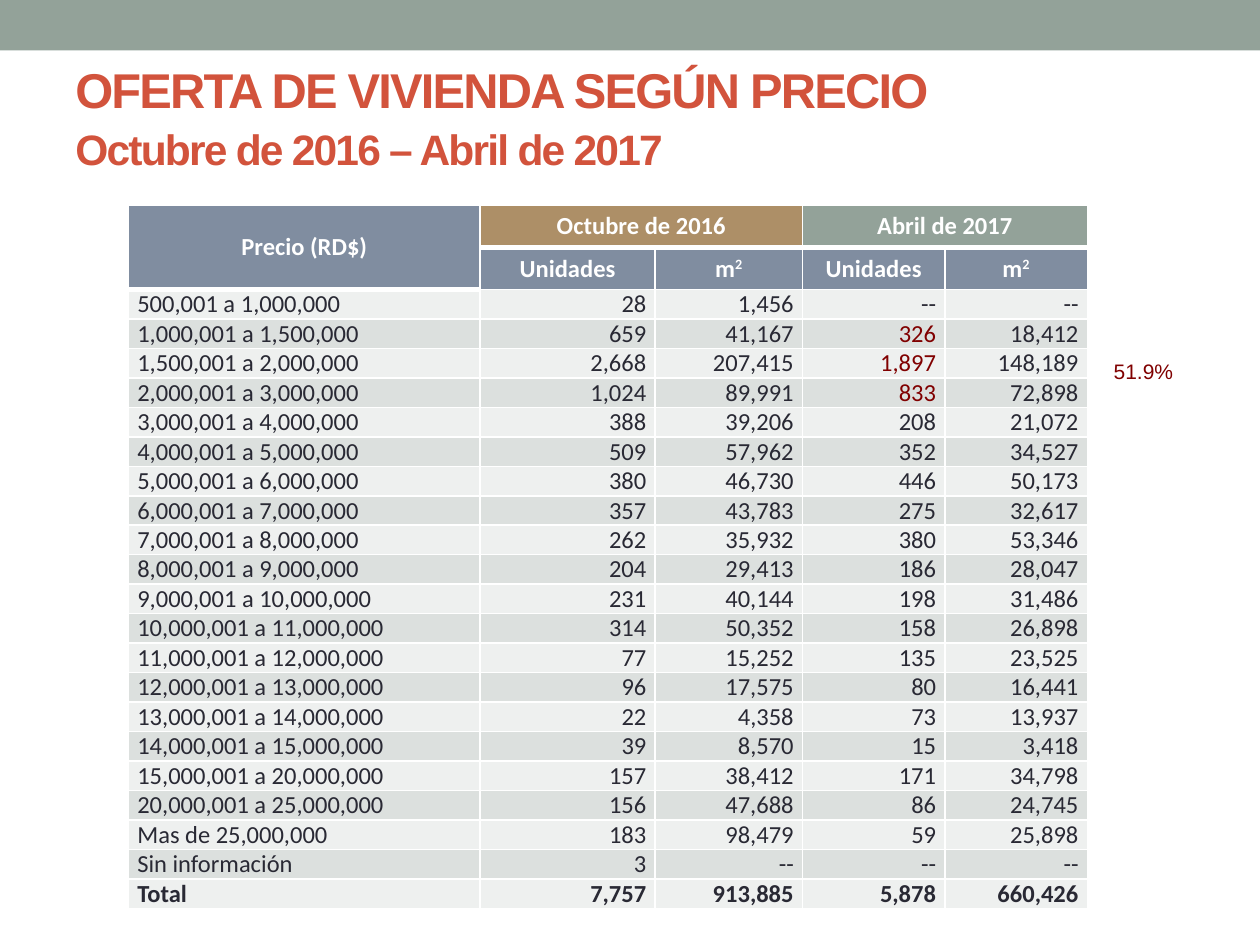
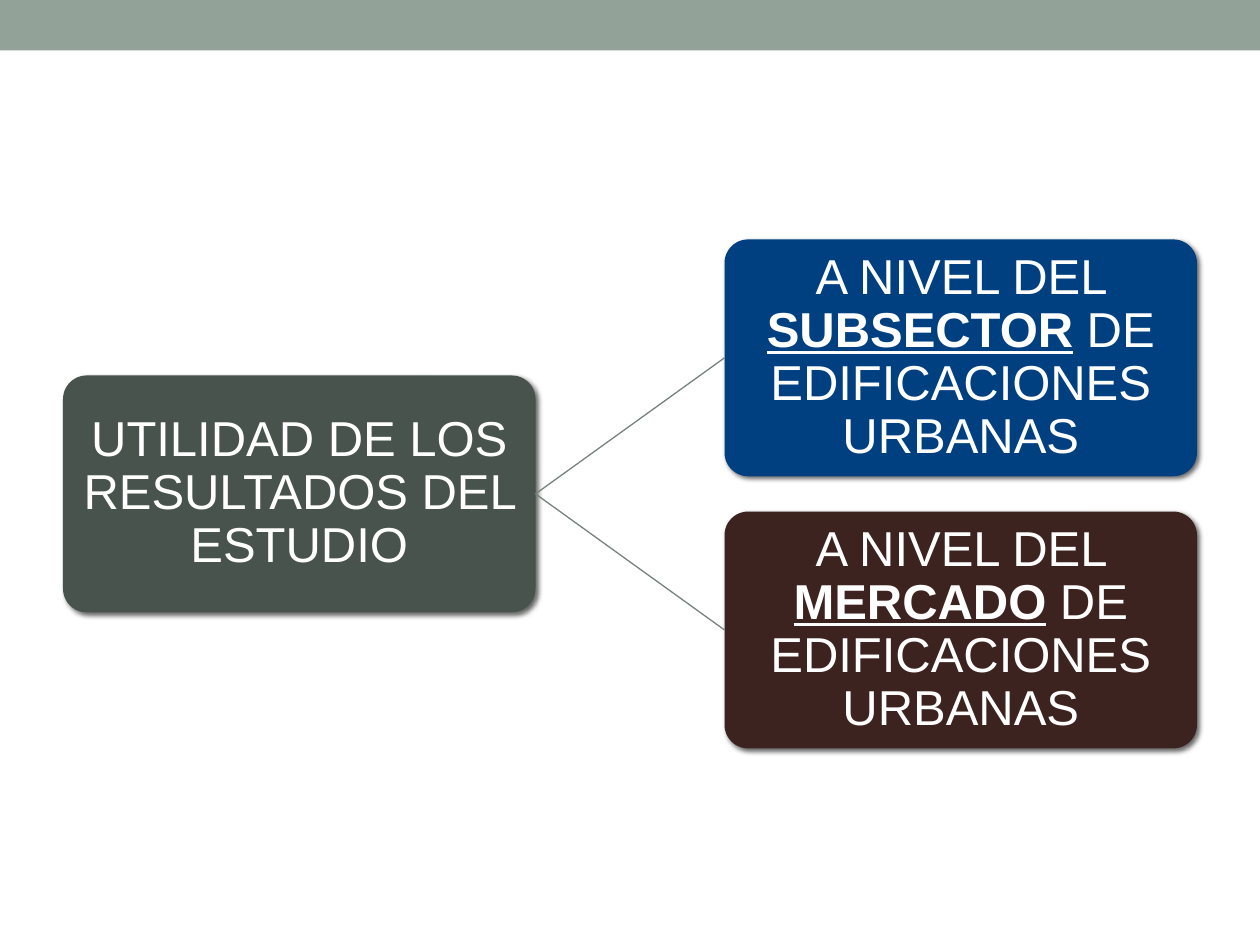
"""Build two slides on the housing supply by price and the uses of the study."""
from dataclasses import dataclass

from lxml.etree import SubElement
from pptx import Presentation
from pptx.dml.color import RGBColor
from pptx.enum.shapes import MSO_CONNECTOR, MSO_SHAPE
from pptx.enum.text import MSO_ANCHOR, PP_ALIGN
from pptx.oxml.ns import qn
from pptx.shapes.autoshape import Shape
from pptx.slide import Slide
from pptx.table import _Cell
from pptx.util import Inches, Pt

COLORS = {
    "band": "93A299", "title": "D2533C", "header": "808DA0", "october": "AD8F67",
    "light": "EEF0EF", "dark": "DCE0DE", "text": "292934", "accent": "800000",
    "white": "FFFFFF", "study": "47534C", "subsector": "004080",
    "market": "3C231F", "link": "76827B", "shadow": "000000",
}
RIGHT_SITE, LEFT_SITE = 3, 1
COL_WIDTHS = (2.79, 1.39, 1.17, 1.13, 1.13)
HEADER_HEIGHT, ROW_HEIGHT = 0.33, 0.23
UNITS_2017 = 3
ACCENT_ROWS = range(1, 4)
PRICE_ROWS = (
    ("500,001 a 1,000,000", "28", "1,456", "--", "--"),
    ("1,000,001 a 1,500,000", "659", "41,167", "326", "18,412"),
    ("1,500,001 a 2,000,000", "2,668", "207,415", "1,897", "148,189"),
    ("2,000,001 a 3,000,000", "1,024", "89,991", "833", "72,898"),
    ("3,000,001 a 4,000,000", "388", "39,206", "208", "21,072"),
    ("4,000,001 a 5,000,000", "509", "57,962", "352", "34,527"),
    ("5,000,001 a 6,000,000", "380", "46,730", "446", "50,173"),
    ("6,000,001 a 7,000,000", "357", "43,783", "275", "32,617"),
    ("7,000,001 a 8,000,000", "262", "35,932", "380", "53,346"),
    ("8,000,001 a 9,000,000", "204", "29,413", "186", "28,047"),
    ("9,000,001 a 10,000,000", "231", "40,144", "198", "31,486"),
    ("10,000,001 a 11,000,000", "314", "50,352", "158", "26,898"),
    ("11,000,001 a 12,000,000", "77", "15,252", "135", "23,525"),
    ("12,000,001 a 13,000,000", "96", "17,575", "80", "16,441"),
    ("13,000,001 a 14,000,000", "22", "4,358", "73", "13,937"),
    ("14,000,001 a 15,000,000", "39", "8,570", "15", "3,418"),
    ("15,000,001 a 20,000,000", "157", "38,412", "171", "34,798"),
    ("20,000,001 a 25,000,000", "156", "47,688", "86", "24,745"),
    ("Mas de 25,000,000", "183", "98,479", "59", "25,898"),
    ("Sin información", "3", "--", "--", "--"),
    ("Total", "7,757", "913,885", "5,878", "660,426"),
)


@dataclass(frozen=True)
class HeaderCell:
    """Heading of the price table and the cells it spans."""
    row: int
    col: int
    text: str
    fill: str = "header"
    rows: int = 1
    cols: int = 1
    sup: str = ""
    rule: float = 1


@dataclass(frozen=True)
class Node:
    """Rounded box whose key word is bold and underlined."""
    left: float
    top: float
    fill: str
    before: str
    key: str = ""
    after: str = ""


HEADERS = (
    HeaderCell(0, 0, "Precio (RD$)", rows=2, rule=3),
    HeaderCell(0, 1, "Octubre de 2016", "october", cols=2, rule=3),
    HeaderCell(0, 3, "Abril de 2017", "band", cols=2, rule=3),
    *(HeaderCell(1, col, "Unidades") for col in (1, 3)),
    *(HeaderCell(1, col, "m", sup="2") for col in (2, 4)),
)
STUDY = Node(0.5, 2.98, "study", "UTILIDAD DE LOS RESULTADOS DEL ESTUDIO")
LEVELS = (
    Node(5.75, 1.9, "subsector", "A NIVEL DEL ", "SUBSECTOR", " DE EDIFICACIONES URBANAS"),
    Node(5.75, 4.06, "market", "A NIVEL DEL ", "MERCADO", " DE EDIFICACIONES URBANAS"),
)


def rgb(name: str) -> RGBColor:
    """Return a named colour."""
    return RGBColor.from_string(COLORS[name])


def set_font(font, size: float, color: str, name: str = "Arial", bold: bool = False) -> None:
    """Set the typeface, size, weight and colour of a font."""
    font.name, font.size, font.bold = name, Pt(size), bold
    font.color.rgb = rgb(color)


def add_slide(prs) -> Slide:
    """Add a blank slide with the top band."""
    s = prs.slides.add_slide(prs.slide_layouts[6])
    sp = s.shapes.add_shape(MSO_SHAPE.RECTANGLE, 0, 0, prs.slide_width, Inches(0.4))
    sp.shadow.inherit = False
    sp.fill.solid()
    sp.fill.fore_color.rgb = rgb("band")
    sp.line.fill.background()
    return s


def add_title(s: Slide, title: str, subtitle: str) -> None:
    """Add a title with a smaller second line."""
    sp = s.shapes.add_textbox(Inches(0.5), Inches(0.45), Inches(9), Inches(0.92))
    tf = sp.text_frame
    tf.word_wrap = True
    tf.vertical_anchor = MSO_ANCHOR.MIDDLE
    p = tf.paragraphs[0]
    p.line_spacing = 1.08
    for i, (text, size) in enumerate(((title, 27.9), (subtitle, 24.3))):
        if i:
            p.add_line_break()
        r = p.add_run()
        r.text = text
        set_font(r.font, size, "title", bold=True)
        r._r.get_or_add_rPr().set("spc", "-100")


def style_cell(cell: _Cell, fill: str, bottom: float = 1) -> None:
    """Give a cell white rules and a plain fill."""
    tc_pr = cell._tc.get_or_add_tcPr()
    for side, width in (("L", 1), ("R", 1), ("T", 1), ("B", bottom)):
        ln = SubElement(tc_pr, qn(f"a:ln{side}"), w=str(Pt(width)))
        SubElement(SubElement(ln, qn("a:solidFill")), qn("a:srgbClr"), val=COLORS["white"])
    cell.fill.solid()
    cell.fill.fore_color.rgb = rgb(fill)


def add_header(table, header: HeaderCell) -> None:
    """Write one heading, merging the cells it spans."""
    last_row, last_col = header.row + header.rows, header.col + header.cols
    for row in range(header.row, last_row):
        for col in range(header.col, last_col):
            style_cell(table.cell(row, col), header.fill, header.rule)
    cell = table.cell(header.row, header.col)
    if header.rows * header.cols > 1:
        cell.merge(table.cell(last_row - 1, last_col - 1))
    cell.vertical_anchor = MSO_ANCHOR.MIDDLE
    p = cell.text_frame.paragraphs[0]
    p.alignment = PP_ALIGN.CENTER
    set_font(p.font, 14, "white", "Calibri", True)
    p.add_run().text = header.text
    if header.sup:
        r = p.add_run()
        r.text = header.sup
        r._r.get_or_add_rPr().set("baseline", "30000")


def add_price_table(s: Slide) -> None:
    """Add the table of supply by price range."""
    heights = [HEADER_HEIGHT] * 2 + [ROW_HEIGHT] * len(PRICE_ROWS)
    table = s.shapes.add_table(len(heights), len(COL_WIDTHS), Inches(1.02), Inches(1.63),
                               Inches(sum(COL_WIDTHS)), Inches(sum(heights))).table
    table.first_row = table.horz_banding = False
    for column, width in zip(table.columns, COL_WIDTHS):
        column.width = Inches(width)
    for row, height in zip(table.rows, heights):
        row.height = Inches(height)
    for header in HEADERS:
        add_header(table, header)
    for i, values in enumerate(PRICE_ROWS):
        for col, value in enumerate(values):
            cell = table.cell(i + 2, col)
            style_cell(cell, "dark" if i % 2 else "light")
            cell.vertical_anchor = MSO_ANCHOR.BOTTOM
            cell.margin_left = cell.margin_right = Inches(0.07)
            cell.margin_top = cell.margin_bottom = 0
            p = cell.text_frame.paragraphs[0]
            p.text = value
            p.alignment = PP_ALIGN.RIGHT if col else PP_ALIGN.JUSTIFY
            color = "accent" if col == UNITS_2017 and i in ACCENT_ROWS else "text"
            set_font(p.font, 14, color, "Calibri", values[0] == "Total")


def add_share(s: Slide, text: str) -> None:
    """Add the share of the highlighted units beside the table."""
    sp = s.shapes.add_textbox(Inches(8.74), Inches(2.8), Inches(0.68), Inches(0.3))
    p = sp.text_frame.paragraphs[0]
    p.text = text
    set_font(p.font, 12, "accent")


def add_shadow(sp: Shape) -> None:
    """Cast a soft shadow to the lower right."""
    sp.shadow.inherit = False
    effects = sp._element.spPr.find(qn("a:effectLst"))
    shadow = SubElement(effects, qn("a:outerShdw"), blurRad=str(Pt(3)), dist=str(Pt(2)),
                        dir="2700000", algn="br", rotWithShape="0")
    color = SubElement(shadow, qn("a:srgbClr"), val=COLORS["shadow"])
    SubElement(color, qn("a:alpha"), val="60000")


def add_node(s: Slide, node: Node) -> Shape:
    """Add a rounded box with its text."""
    sp = s.shapes.add_shape(MSO_SHAPE.ROUNDED_RECTANGLE, Inches(node.left), Inches(node.top),
                            Inches(3.75), Inches(1.88))
    sp.adjustments[0] = 0.1
    sp.fill.solid()
    sp.fill.fore_color.rgb = rgb(node.fill)
    sp.line.fill.background()
    add_shadow(sp)
    tf = sp.text_frame
    tf.word_wrap = True
    tf.vertical_anchor = MSO_ANCHOR.MIDDLE
    tf.margin_left = tf.margin_right = tf.margin_top = tf.margin_bottom = Inches(0.02)
    p = tf.paragraphs[0]
    p.alignment = PP_ALIGN.CENTER
    p.line_spacing = 0.9
    set_font(p.font, 28, "white")
    for text in filter(None, (node.before, node.key, node.after)):
        r = p.add_run()
        r.text = text
        if text == node.key:
            r.font.bold = r.font.underline = True
    return sp


def add_link(s: Slide, start: Shape, end: Shape) -> None:
    """Join the right side of one box to the left side of another."""
    cxn = s.shapes.add_connector(MSO_CONNECTOR.STRAIGHT, 0, 0, 0, 0)
    cxn.begin_connect(start, RIGHT_SITE)
    cxn.end_connect(end, LEFT_SITE)
    cxn.line.color.rgb = rgb("link")
    cxn.line.width = Pt(0.75)
    SubElement(cxn._element.spPr, qn("a:effectLst"))


def main() -> None:
    """Build and save the presentation."""
    prs = Presentation()
    prs.slide_width, prs.slide_height = Inches(10), Inches(7.5)

    s = add_slide(prs)
    add_title(s, "OFERTA DE VIVIENDA SEGÚN PRECIO", "Octubre de 2016 – Abril de 2017")
    add_price_table(s)
    add_share(s, "51.9%")

    s = add_slide(prs)
    study = add_node(s, STUDY)
    for level in LEVELS:
        add_link(s, study, add_node(s, level))

    prs.save("out.pptx")


if __name__ == "__main__":
    main()
